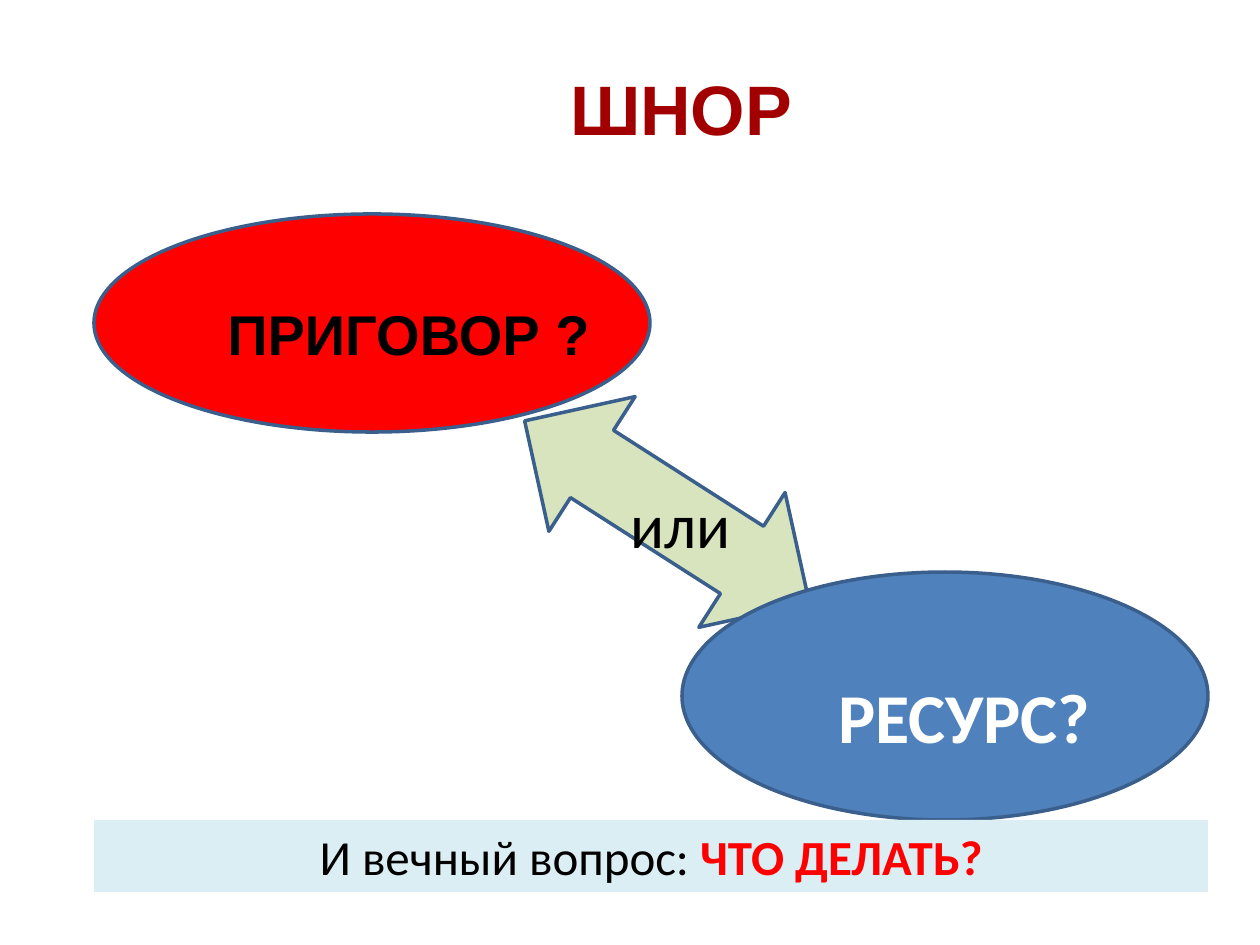
from pptx import Presentation
from pptx.dml.color import RGBColor
from pptx.enum.shapes import MSO_SHAPE
from pptx.enum.text import MSO_ANCHOR, PP_ALIGN
from pptx.util import Pt

SCALE = 914400 / 126


def px(*nums):
    return [round(n * SCALE) for n in nums]


def color(code):
    return RGBColor.from_string(code)


def add_shape(slide, kind, box, fill, line=None, turn=0):
    shape = slide.shapes.add_shape(kind, *px(*box))
    shape.shadow.inherit = False
    shape.rotation = turn
    shape.fill.solid()
    shape.fill.fore_color.rgb = color(fill)
    if line:
        shape.line.color.rgb = color(line)
        shape.line.width = Pt(2)
    else:
        shape.line.fill.background()
    return shape


def add_run(para, text, size, face, tint, bold):
    run = para.add_run()
    run.text = text
    font = run.font
    font.size = Pt(size)
    font.name = face
    font.bold = bold
    font.color.rgb = color(tint)


def add_box(slide, box):
    frame = slide.shapes.add_textbox(*px(*box)).text_frame
    frame.word_wrap = True
    return frame


def set_para(para, align, gap=0, indent=0):
    para.alignment = align
    para.space_before = Pt(gap)
    if indent:
        para._p.get_or_add_pPr().set("marL", str(px(indent)[0]))


def main():
    deck = Presentation()
    deck.slide_width, deck.slide_height = px(1260, 945)
    slide = deck.slides.add_slide(deck.slide_layouts[6])
    edge = "3A5F8C"
    mid, left = PP_ALIGN.CENTER, PP_ALIGN.LEFT

    add_shape(slide, MSO_SHAPE.LEFT_RIGHT_ARROW, (498, 432, 338, 160), "D7E4BD", edge, 32.6)
    add_shape(slide, MSO_SHAPE.OVAL, (682, 572, 526, 248), "4F81BD", edge)
    add_shape(slide, MSO_SHAPE.OVAL, (94, 214, 556, 218), "FF0000", edge)

    lines = [
        ("ШНОР", 40, "Arial", "A20000", True, mid, 0, 0),
        ("ПРИГОВОР ?", 32, "Arial", "000000", True, left, 86, 0),
        ("или", 36, "Calibri", "000000", False, mid, 68, 0),
        ("РЕСУРС?", 40, "Calibri", "FFFFFF", True, mid, 64, 567),
    ]
    frame = add_box(slide, (215, 59, 932, 704))
    for i, (text, size, face, tint, bold, align, gap, indent) in enumerate(lines):
        para = frame.add_paragraph() if i else frame.paragraphs[0]
        set_para(para, align, gap, indent)
        add_run(para, text, size, face, tint, bold)

    strip = add_shape(slide, MSO_SHAPE.RECTANGLE, (94, 820, 1114, 72), "DBEEF4")
    strip.text_frame.word_wrap = True
    strip.text_frame.vertical_anchor = MSO_ANCHOR.TOP
    para = strip.text_frame.paragraphs[0]
    set_para(para, mid)
    add_run(para, "И вечный вопрос: ", 28, "Calibri", "000000", False)
    add_run(para, "ЧТО ДЕЛАТЬ?", 28, "Calibri", "FF0000", True)

    deck.save("out.pptx")


if __name__ == "__main__":
    main()
